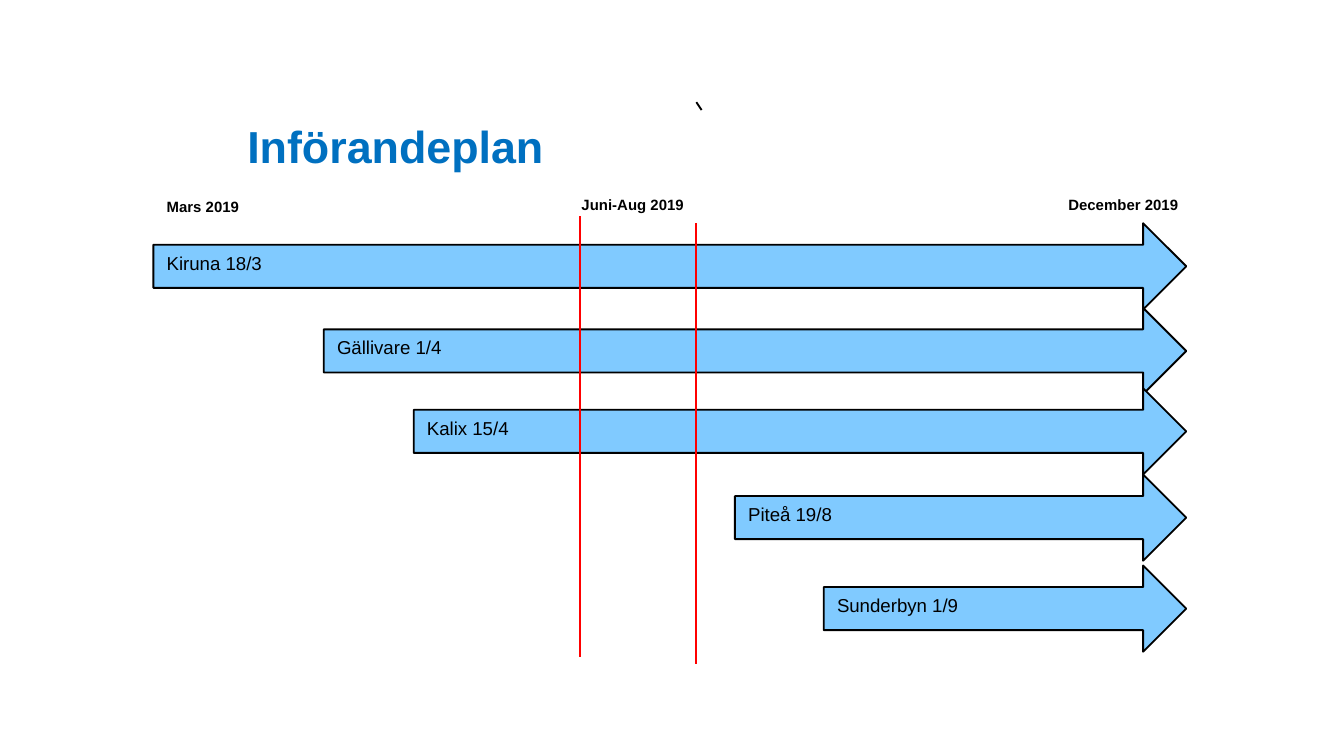
from lxml.etree import SubElement
from pptx import Presentation
from pptx.dml.color import RGBColor
from pptx.enum.shapes import MSO_CONNECTOR, MSO_SHAPE
from pptx.enum.text import MSO_ANCHOR, MSO_AUTO_SIZE, PP_ALIGN
from pptx.oxml.ns import qn
from pptx.util import Cm, Pt

BLACK = RGBColor(0x00, 0x00, 0x00)
RED = RGBColor(0xFF, 0x00, 0x00)
TITLE_BLUE = RGBColor(0x00, 0x70, 0xC0)
ARROW_BLUE = RGBColor(0x80, 0xCA, 0xFF)

ARROW_END = 22.42
ARROW_HEIGHT = 1.63
LABEL_HEIGHT = 0.61
PERIOD_LINE_LENGTH = 8.33

# Site and start date, left, top (cm)
ROLLOUTS = [
    ("Kiruna 18/3", 2.9, 4.22),
    ("Gällivare 1/4", 6.12, 5.82),
    ("Kalix 15/4", 7.82, 7.34),
    ("Piteå 19/8", 13.89, 8.97),
    ("Sunderbyn 1/9", 15.57, 10.69),
]
# Period, left, top, width (cm)
PERIODS = [
    ("Mars 2019", 2.9, 3.61, 1.9),
    ("Juni-Aug 2019", 10.74, 3.58, 2.46),
    ("December 2019", 19.94, 3.58, 2.62),
]
# Start and end of the summer break: x, top (cm)
BREAK_LINES = [(10.96, 4.09), (13.16, 4.22)]


def write_text(frame, text, size, color, bold=False):
    paragraph = frame.paragraphs[0]
    paragraph.text = text
    paragraph.alignment = PP_ALIGN.LEFT
    font = paragraph.font
    font.name, font.size, font.bold = "Arial", Pt(size), bold
    font.color.rgb = color


def add_title(slide, text):
    title = slide.shapes.title
    title.left, title.top = Cm(4.42), Cm(1.07)
    title.width, title.height = Cm(16.61), Cm(2.31)
    title.text_frame.vertical_anchor = MSO_ANCHOR.BOTTOM
    write_text(title.text_frame, text, 24, TITLE_BLUE, bold=True)


def add_rollout_arrow(slide, text, left, top):
    arrow = slide.shapes.add_shape(
        MSO_SHAPE.RIGHT_ARROW, Cm(left), Cm(top),
        Cm(ARROW_END - left), Cm(ARROW_HEIGHT))
    arrow.shadow.inherit = False
    arrow.fill.solid()
    arrow.fill.fore_color.rgb = ARROW_BLUE
    arrow.line.color.rgb = BLACK
    arrow.line.width = Pt(1)
    arrow.text_frame.vertical_anchor = MSO_ANCHOR.TOP
    write_text(arrow.text_frame, text, 10, BLACK)


def add_period_label(slide, text, left, top, width):
    label = slide.shapes.add_textbox(
        Cm(left), Cm(top), Cm(width), Cm(LABEL_HEIGHT))
    label.text_frame.word_wrap = False
    label.text_frame.auto_size = MSO_AUTO_SIZE.SHAPE_TO_FIT_TEXT
    write_text(label.text_frame, text, 8, BLACK, bold=True)


def add_line(slide, x1, y1, x2, y2, color):
    line = slide.shapes.add_connector(
        MSO_CONNECTOR.STRAIGHT, Cm(x1), Cm(y1), Cm(x2), Cm(y2))
    line.line.color.rgb = color
    line.line.width = Pt(1)
    SubElement(line._element.spPr, qn("a:effectLst"))


def main():
    prs = Presentation()
    prs.slide_width, prs.slide_height = Cm(25.4), Cm(14.29)
    slide = prs.slides.add_slide(prs.slide_layouts[5])

    add_title(slide, "Införandeplan")
    for rollout in ROLLOUTS:
        add_rollout_arrow(slide, *rollout)
    for period in PERIODS:
        add_period_label(slide, *period)
    for x, top in BREAK_LINES:
        add_line(slide, x, top, x, top + PERIOD_LINE_LENGTH, RED)
    add_line(slide, 13.26, 2.08, 13.16, 1.93, BLACK)

    prs.save("out.pptx")


if __name__ == "__main__":
    main()
